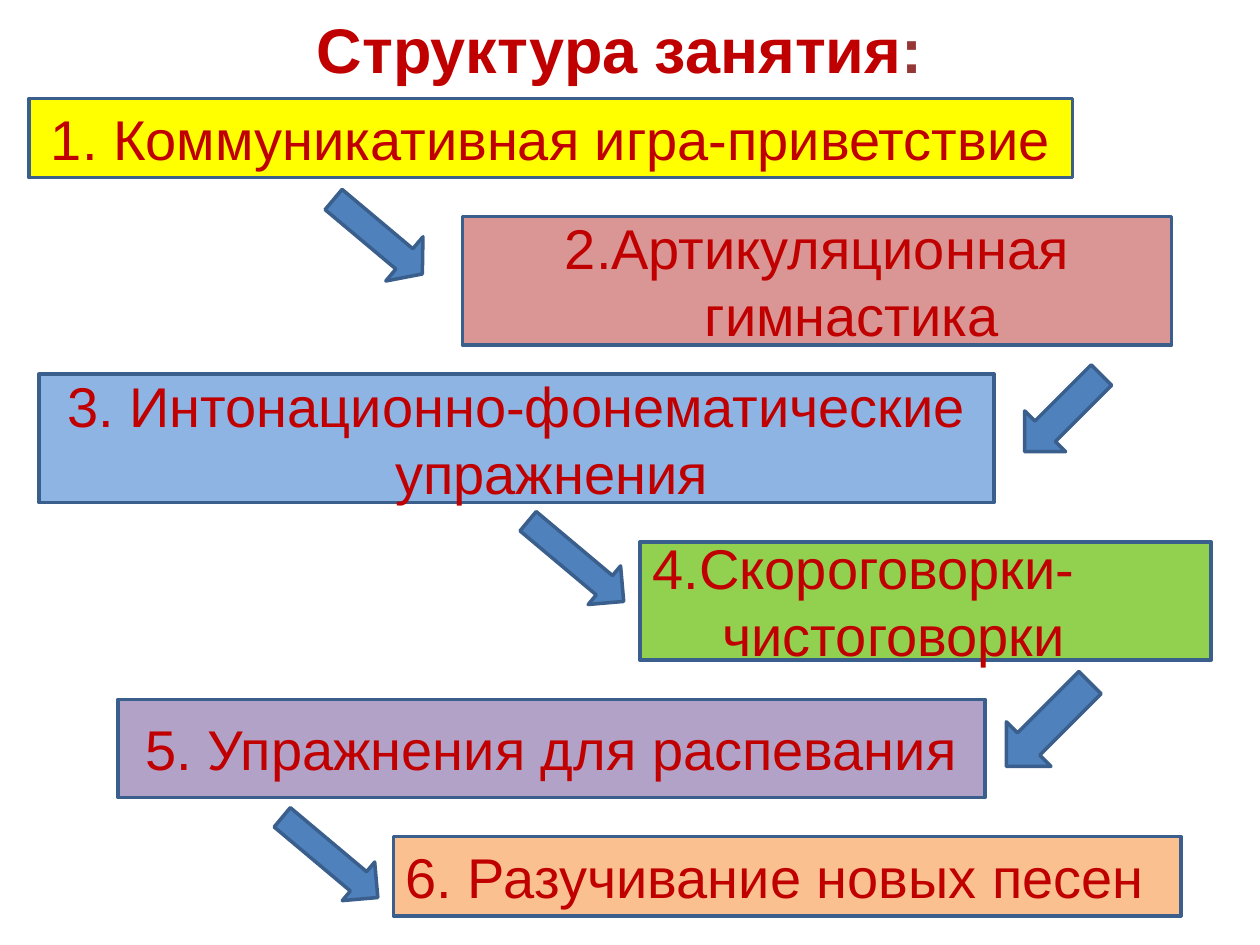
"""Build the lesson structure slide: six staggered steps joined by block arrows."""
from pptx import Presentation
from pptx.dml.color import RGBColor
from pptx.enum.shapes import MSO_SHAPE
from pptx.enum.text import MSO_ANCHOR, MSO_AUTO_SIZE, PP_ALIGN
from pptx.util import Pt

RED = RGBColor(0xC0, 0x00, 0x00)
DARK_RED = RGBColor(0x95, 0x37, 0x35)
BLUE = RGBColor(0x4F, 0x81, 0xBD)
OUTLINE = RGBColor(0x3A, 0x5F, 0x8C)
YELLOW = RGBColor(0xFF, 0xFF, 0x00)
PINK = RGBColor(0xD9, 0x96, 0x94)
LIGHT_BLUE = RGBColor(0x8E, 0xB4, 0xE3)
GREEN = RGBColor(0x92, 0xD0, 0x50)
PURPLE = RGBColor(0xB3, 0xA2, 0xC7)
ORANGE = RGBColor(0xFA, 0xC0, 0x90)
CENTER, JUSTIFY = PP_ALIGN.CENTER, PP_ALIGN.JUSTIFY


def add_block(kind, box, fill):
    sp = s.shapes.add_shape(kind, *[Pt(v) for v in box])
    sp.shadow.inherit = False
    sp.fill.solid()
    sp.fill.fore_color.rgb = fill
    sp.line.color.rgb = OUTLINE
    sp.line.width = Pt(2)
    return sp


def set_font(r, size, color, bold=False):
    r.font.name = "Arial"
    r.font.size = Pt(size)
    r.font.bold = bold
    r.font.color.rgb = color


prs = Presentation()
prs.slide_width, prs.slide_height = Pt(720), Pt(540)
s = prs.slides.add_slide(prs.slide_layouts[5])

title = s.shapes.title
title.left, title.top, title.width, title.height = Pt(0), Pt(5.8), Pt(708.5), Pt(62)
tf = title.text_frame
tf.auto_size = MSO_AUTO_SIZE.NONE
tf.vertical_anchor = MSO_ANCHOR.TOP
p = tf.paragraphs[0]
p.alignment = CENTER
p.line_spacing = Pt(40)
for text, color in [("Структура занятия", RED), (":", DARK_RED)]:
    r = p.add_run()
    r.text = text
    set_font(r, 36, color, True)

arrows = [
    ((199.5, 102.2, 33, 66.2), 310, (0.458, 0.406)),
    ((591, 205.2, 33, 62), 45, (0.5, 0.5)),
    ((314.7, 285.1, 28.8, 71.3), 310, (0.5, 0.5)),
    ((581, 380.2, 36, 67.7), 45, (0.5, 0.5)),
    ((174.2, 454.3, 28.8, 71.3), 310, (0.5, 0.5)),
]
for box, angle, adjustments in arrows:
    sp = add_block(MSO_SHAPE.DOWN_ARROW, box, BLUE)
    sp.rotation = angle
    for i, value in enumerate(adjustments):
        sp.adjustments[i] = value

steps = [
    ("1. Коммуникативная игра-приветствие", (16.7, 56.2, 596.2, 45.4), YELLOW, CENTER, 0),
    ("2.Артикуляционная гимнастика", (264.2, 123.8, 405.4, 73.4), PINK, CENTER, 40),
    ("3. Интонационно-фонематические упражнения", (22.3, 213.8, 545.8, 73.4), LIGHT_BLUE, CENTER, 40),
    ("4.Скороговорки-чистоговорки", (365.8, 309.6, 326.2, 67.7), GREEN, JUSTIFY, 40),
    ("5. Упражнения для распевания", (67.5, 399.6, 495.4, 56.2), PURPLE, CENTER, 40),
    ("6. Разучивание новых песен", (224.8, 478, 450, 45.4), ORANGE, JUSTIFY, 40),
]
for text, box, fill, alignment, indent in steps:
    tf = add_block(MSO_SHAPE.RECTANGLE, box, fill).text_frame
    tf.word_wrap = True
    tf.vertical_anchor = MSO_ANCHOR.MIDDLE
    tf.text = text
    p = tf.paragraphs[0]
    p.alignment = alignment
    pPr = p._p.get_or_add_pPr()
    pPr.set("marL", str(Pt(indent)))
    pPr.set("indent", str(-Pt(indent)))
    set_font(p.runs[0], 32, RED)

prs.save("out.pptx")
